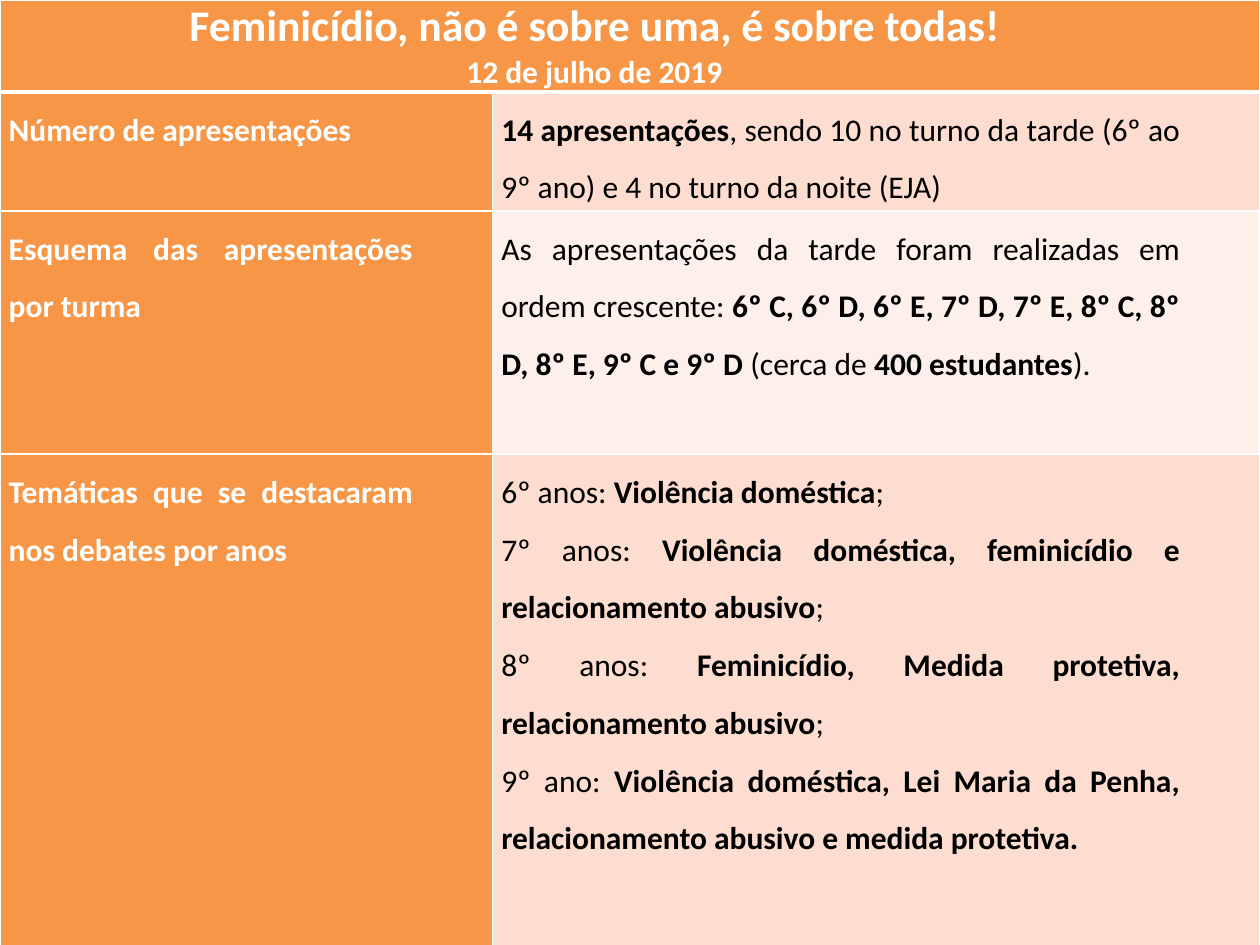
"""Build the slide with the table about the femicide talks."""
from lxml import etree
from pptx import Presentation
from pptx import util as u
from pptx.dml.color import RGBColor
from pptx.enum import text
from pptx.oxml.ns import qn


def paint(fill, color):
    fill.solid()
    fill.fore_color.rgb = RGBColor.from_string(color)


def style(cell, color, base):
    cell.margin_left = cell.margin_right = u.Pt(5)
    cell.margin_top = cell.margin_bottom = 0
    props = cell._tc.get_or_add_tcPr()
    for side in "LRTB":
        width = u.Pt(3 if side == "B" and base else 1)
        line = etree.SubElement(props, qn(f"a:ln{side}"), w=str(width))
        solid = etree.SubElement(line, qn("a:solidFill"))
        etree.SubElement(solid, qn("a:srgbClr"), val="FFFFFF")
    paint(cell.fill, color)


ORANGE, ROSE, CREAM = "F79646", "FCDDCF", "FDEFE9"
TITLE = "*Feminicídio, não é sobre uma, é sobre todas!*\n*12 de julho de 2019*"
# Asterisks enclose bold text.
ROWS = [
    (52, ORANGE, TITLE, ""),
    (68, ROSE, "*Número de apresentações*",
     "*14 apresentações*, sendo 10 no turno da tarde (6º ao 9º ano) e 4 no turno da noite (EJA)"),
    (139, CREAM, "*Esquema das apresentações por turma*",
     "As apresentações da tarde foram realizadas em ordem crescente: "
     "*6º C, 6º D, 6º E, 7º D, 7º E, 8º C, 8º D, 8º E, 9º C e 9º D* "
     "(cerca de *400 estudantes*)."),
    (281, ROSE, "*Temáticas que se destacaram nos debates por anos*",
     "6º anos: *Violência doméstica*;\n"
     "7º anos: *Violência doméstica, feminicídio e relacionamento abusivo*;\n"
     "8º anos: *Feminicídio, Medida protetiva, relacionamento abusivo*;\n"
     "9º ano: *Violência doméstica, Lei Maria da Penha, "
     "relacionamento abusivo e medida protetiva.*"),
]

deck = Presentation()
deck.slide_width, deck.slide_height = u.Pt(720), u.Pt(540)
slide = deck.slides.add_slide(deck.slide_layouts[6])
paint(slide.background.fill, "000000")

table = slide.shapes.add_table(4, 2, 0, 0, u.Pt(720), u.Pt(540)).table
for col, width in zip(table.columns, (281.5, 438.5)):
    col.width = u.Pt(width)
table.cell(0, 0).merge(table.cell(0, 1))

for i, (height, tint, *words) in enumerate(ROWS):
    table.rows[i].height = u.Pt(height)
    for j, body in enumerate(words):
        cell = table.cell(i, j)
        style(cell, tint if j else ORANGE, i == 0)
        if not body:
            continue
        frame = cell.text_frame
        frame.text = body.replace("*", "")
        for n, (para, source) in enumerate(zip(frame.paragraphs, body.split("\n"))):
            para.clear()
            para.alignment = text.PP_ALIGN.JUSTIFY if i else text.PP_ALIGN.CENTER
            para.line_spacing = 1.5 if i else 1.0
            para.space_before = u.Pt(0.1)
            para._p.get_or_add_pPr().set("marR", str(u.Pt(40.5)))
            for k, part in enumerate(source.split("*")):
                if part:
                    run = para.add_run()
                    run.text = part
                    font = run.font
                    font.name, font.bold = "Calibri", k % 2 == 1
                    font.size = u.Pt(25 if i == n == 0 else 18)
                    paint(font.fill, "000000" if j else "FFFFFF")

deck.save("out.pptx")
